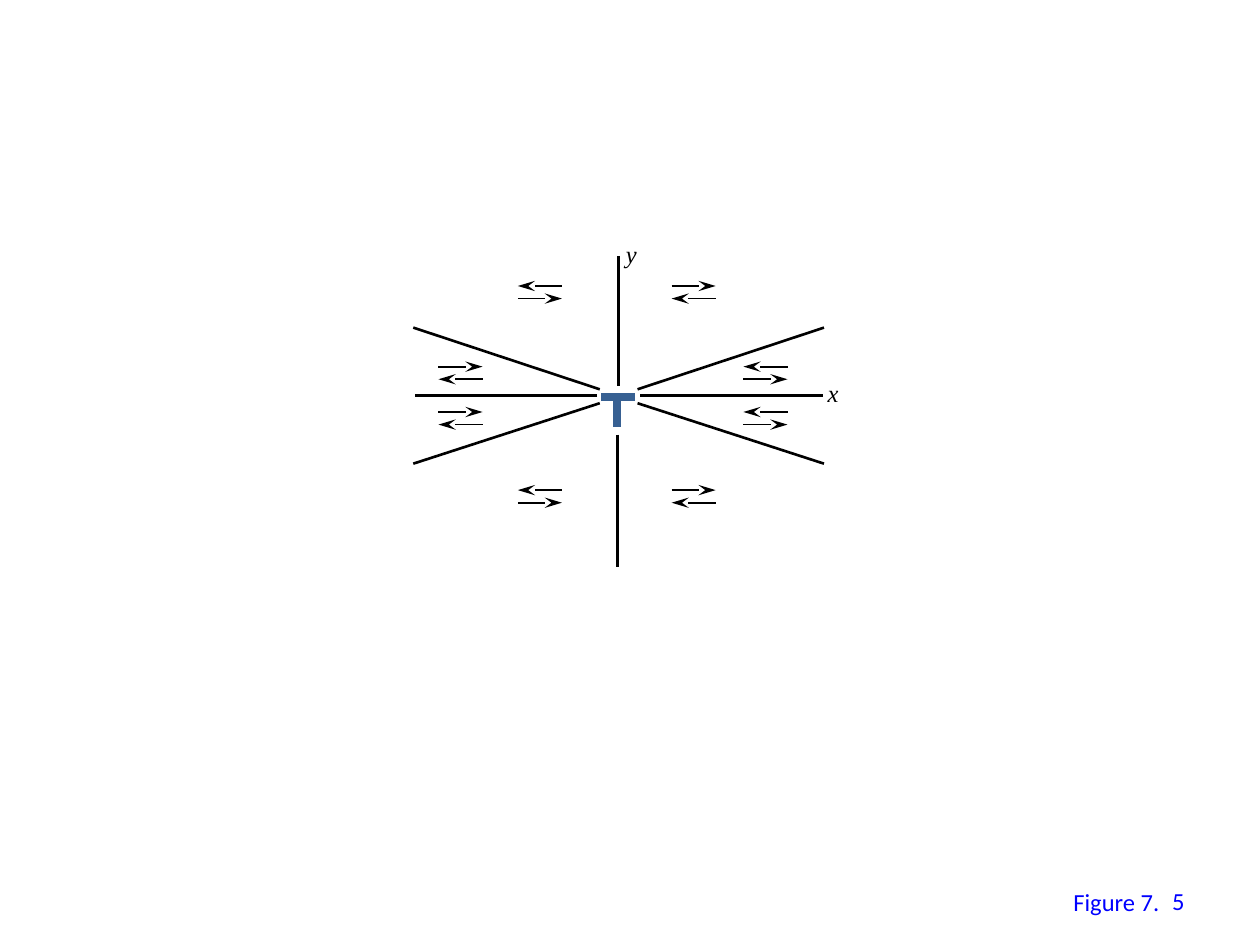
from pptx import Presentation
from pptx.dml.color import RGBColor
from pptx.enum.shapes import MSO_CONNECTOR as Link
from pptx.enum.text import MSO_ANCHOR as Anchor, MSO_AUTO_SIZE as Fit, PP_ALIGN as Align
from pptx.oxml.ns import qn
from pptx.util import Pt
from lxml.etree import SubElement

PX = 9144
INK = {"line": "000000", "tee": "376092", "foot": "0000FF"}


def draw_line(shapes, start, end, color="line", width=1.5, arrow=False):
    """Draw a straight line, with a stealth head at its end if asked."""
    line = shapes.add_connector(Link.STRAIGHT, *(round(v * PX) for v in (*start, *end)))
    line.line.color.rgb = RGBColor.from_string(INK[color])
    line.line.width = Pt(width)
    if arrow:
        SubElement(line.line._get_or_add_ln(), qn("a:tailEnd"), type="stealth", w="med", len="lg")
    SubElement(line._element.spPr, qn("a:effectLst"))
    return line


def add_text(slide, box, text, font, color, italic=False, wrap=False):
    """Place one line of 14 pt text in a box."""
    shape = slide.shapes.add_textbox(*(v * PX for v in box))
    frame = shape.text_frame
    frame.text = text
    frame.word_wrap = wrap
    frame.auto_size = Fit.NONE if wrap else Fit.SHAPE_TO_FIT_TEXT
    face = frame.paragraphs[0].runs[0].font
    face.name, face.size, face.italic = font, Pt(14), italic
    face.color.rgb = RGBColor.from_string(INK[color])
    return frame


def add_pair(slide, left, top, right_first):
    """Group two opposed arrows, one above the other."""
    shapes = slide.shapes.add_group_shape().shapes
    for row in range(2):
        ends = [(left, top + 10 * row), (left + 35, top + 10 * row)]
        if right_first == bool(row):
            ends.reverse()
        draw_line(shapes, *ends, width=1, arrow=True)


def add_tee(slide, x, y):
    """Group the bar and stem of the T about its centre."""
    shapes = slide.shapes.add_group_shape().shapes
    draw_line(shapes, (x + 13, y), (x - 14, y), "tee", 4.5)
    draw_line(shapes, (x - 1, y), (x - 1, y + 24), "tee", 4.5)


def add_plot(slide, box):
    """Draw the axes, rays, T and arrow pairs within a box."""
    left, top, wide, high = box
    x, y = left + wide // 2, top + high * 45 // 100

    for side in (-1, 1):
        for near, far in ((-5, -54), (6, 54)):
            draw_line(slide.shapes, (x + 163 * side, y + far), (x + 15 * side, y + near))
        draw_line(slide.shapes, (x + 17 * side, y), (x + 162 * side, y))
    draw_line(slide.shapes, (x, top), (x, y - 8))
    draw_line(slide.shapes, (x - 1, y + 31), (x - 1, top + high))
    add_tee(slide, x, y + 1)

    outer, inner = (-23, 13), (-87, 75)
    for col, rows, right_first in (
        (-143, outer, True), (-80, inner, False), (42, inner, True), (99, outer, False),
    ):
        for row in rows:
            add_pair(slide, x + col, y + row, right_first)

    for text, dx, dy in (("y", -4, -129), ("x", 156, -19)):
        add_text(slide, (x + dx, y + dy, 34, 34), text, "Times New Roman", "line", italic=True)


def add_foot(slide, box):
    """Place the figure label and number at the bottom right."""
    left, top, wide, high = box
    add_text(slide, (left + 125, top + 4, 89, 34), "Figure 7.", "Calibri", "foot")
    frame = add_text(slide, box, "5", "Calibri", "foot", wrap=True)
    frame.vertical_anchor = Anchor.MIDDLE
    frame.paragraphs[0].alignment = Align.RIGHT


def main():
    """Build and save the slide."""
    deck = Presentation()
    deck.slide_width, deck.slide_height = 1000 * PX, 750 * PX
    slide = deck.slides.add_slide(deck.slide_layouts[6])
    add_plot(slide, (328, 203, 326, 247))
    add_foot(slide, (717, 695, 233, 40))
    deck.save("out.pptx")


if __name__ == "__main__":
    main()
